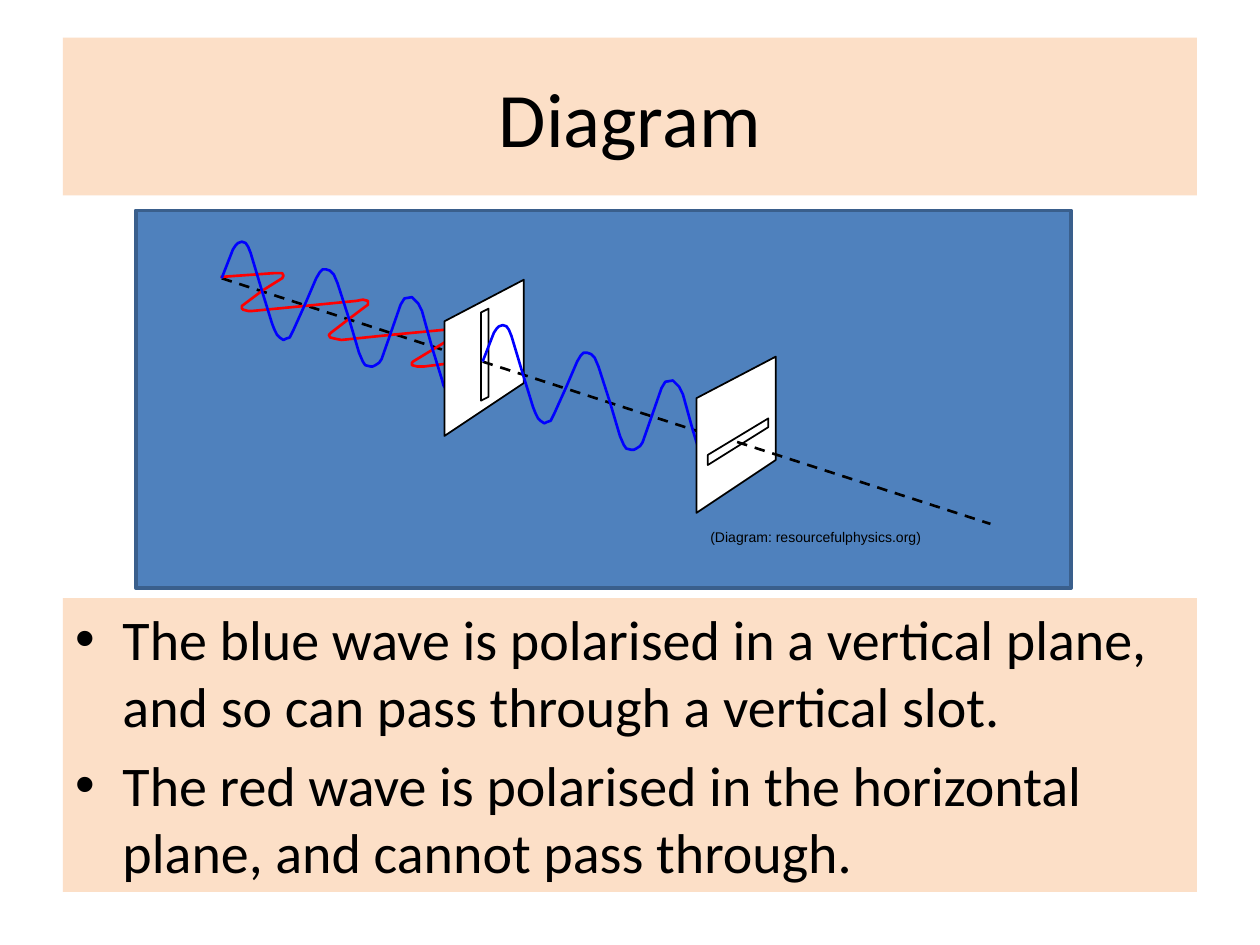
from collections import namedtuple
from dataclasses import dataclass

from lxml.etree import SubElement
from pptx import Presentation
from pptx.dml.color import RGBColor as RGB
from pptx.enum.dml import MSO_LINE as DASHES
from pptx.enum.shapes import MSO_SHAPE as SHAPES
from pptx.enum.text import MSO_ANCHOR as ANCHOR, PP_ALIGN as ALIGN
from pptx.oxml.ns import qn
from pptx.util import Cm, Pt

Box = namedtuple("Box", "left top width height")


@dataclass(frozen=True)
class Theme:
    peach: RGB = RGB(0xFC, 0xD5, 0xB5)
    panel: RGB = RGB(0x4F, 0x81, 0xBD)
    panel_edge: RGB = RGB(0x3A, 0x5F, 0x8C)
    ink: RGB = RGB(0, 0, 0)
    white: RGB = RGB(0xFF, 0xFF, 0xFF)
    red: RGB = RGB(0xFF, 0, 0)
    blue: RGB = RGB(0, 0, 0xFF)
    heading_size: int = 44
    body_size: int = 32
    caption_size: int = 8
    main_font: str = "Calibri"
    caption_font: str = "Arial"


THEME = Theme()
GRID = Cm(2.54) / 100

AXIS = [(0, 0), (201, 65)]
BLUE_WAVE = [
    (0, 0), (9, -23), (11, -26), (13, -28), (16, -29), (19, -28), (21, -25),
    (23, -20), (32, 10), (40, 36), (42, 41), (44, 45), (46, 47), (49, 49),
    (51, 48), (54, 47), (57, 41), (66, 21), (75, 0), (78, -5), (80, -7),
    (83, -7), (86, -6), (89, -3), (92, 4), (101, 32), (109, 59), (112, 66),
    (114, 69), (118, 70), (120, 70), (122, 69), (125, 67), (127, 64),
    (134, 44), (142, 21), (145, 16), (151, 15), (156, 20), (159, 26),
    (167, 55), (175, 81), (176, 85), (178, 88), (180, 91), (182, 92),
    (184, 93), (186, 93), (189, 92), (191, 89), (192, 86), (200, 66),
]
RED_WAVE = [
    (-1, -1), (41, -4), (44, -4), (48, -4), (49, -2), (48, 0), (32, 10),
    (16, 22), (16, 24), (17, 25), (21, 26), (24, 26), (66, 22), (107, 18),
    (112, 17), (116, 18), (116, 21), (100, 33), (87, 43), (85, 45), (86, 47),
    (90, 48), (95, 49), (134, 45), (176, 41), (180, 41), (186, 41), (186, 43),
    (185, 46), (152, 66), (151, 67), (151, 69), (155, 70), (161, 70), (201, 65),
]
PLATE = [(0, 33), (0, 124), (63, 82), (63, 0)]
VERTICAL_SLOT = [(29, 26), (29, 96), (35, 93), (35, 23)]
HORIZONTAL_SLOT = [(57, 56), (9, 86), (9, 78), (57, 49)]


def write_text(shape, lines, *, size, font, align=ALIGN.LEFT, anchor=ANCHOR.TOP,
               bullet=None, gap=0, after=0):
    frame = shape.text_frame
    frame.word_wrap = True
    frame.vertical_anchor = anchor
    for number, line in enumerate(lines):
        paragraph = frame.add_paragraph() if number else frame.paragraphs[0]
        if bullet:
            properties = paragraph._p.get_or_add_pPr()
            properties.set("marL", str(Cm(0.95)))
            properties.set("indent", str(-Cm(0.95)))
            SubElement(properties, qn("a:buFont")).set("typeface", "Arial")
            SubElement(properties, qn("a:buChar")).set("char", bullet)
        paragraph.alignment = align
        paragraph.space_before = Pt(gap if number else 0)
        paragraph.space_after = Pt(after)
        run = paragraph.add_run()
        run.text = line
        run.font.size = Pt(size)
        run.font.name = font
        run.font.color.rgb = THEME.ink


def add_panel(slide, box, color, opacity=100):
    panel = slide.shapes.add_shape(SHAPES.RECTANGLE, *box)
    panel.shadow.inherit = False
    panel.fill.solid()
    panel.fill.fore_color.rgb = color
    panel.line.fill.background()
    if opacity < 100:
        tint = panel.fill._xPr.find(qn("a:solidFill"))[0]
        SubElement(tint, qn("a:alpha")).set("val", str(opacity * 1000))
    return panel


def draw_path(slide, origin, points, *, color=THEME.ink, width=1.5, fill=None, dash=None):
    builder = slide.shapes.build_freeform(*points[0], scale=GRID)
    builder.add_line_segments(points[1:], close=fill is not None)
    path = builder.convert_to_shape(*origin)
    path.shadow.inherit = False
    if fill is None:
        path.fill.background()
    else:
        path.fill.solid()
        path.fill.fore_color.rgb = fill
    path.line.color.rgb = color
    path.line.width = Pt(width)
    if dash:
        path.line.dash_style = dash


def add_heading(slide, box):
    heading = add_panel(slide, box, THEME.peach, opacity=75)
    write_text(heading, ["Diagram"], size=THEME.heading_size, font=THEME.main_font,
               align=ALIGN.CENTER, anchor=ANCHOR.MIDDLE)


def add_diagram(slide, box):
    def at(x, y):
        return box.left + Cm(x), box.top + Cm(y)

    def add_axis(origin):
        draw_path(slide, origin, AXIS, dash=DASHES.DASH)

    def add_polariser(origin, slot):
        for outline in (PLATE, slot):
            draw_path(slide, origin, outline, width=1, fill=THEME.white)

    backdrop = add_panel(slide, box, THEME.panel)
    backdrop.line.color.rgb = THEME.panel_edge
    backdrop.line.width = Pt(2)

    source, first_exit, second_exit = at(1.73, 1.37), at(6.99, 3.05), at(12.12, 4.67)
    add_axis(source)
    draw_path(slide, source, RED_WAVE, color=THEME.red)
    draw_path(slide, source, BLUE_WAVE, color=THEME.blue)
    add_polariser(at(6.22, 1.4), VERTICAL_SLOT)
    add_axis(first_exit)
    draw_path(slide, first_exit, BLUE_WAVE, color=THEME.blue)
    add_polariser(at(11.3, 2.95), HORIZONTAL_SLOT)
    add_axis(second_exit)

    credit = slide.shapes.add_textbox(*at(11.33, 6.3), Cm(4.98), Cm(0.61))
    write_text(credit, ["(Diagram: resourcefulphysics.org)"], size=THEME.caption_size,
               font=THEME.caption_font, after=10)


def add_explanation(slide, box):
    explanation = add_panel(slide, box, THEME.peach, opacity=75)
    write_text(explanation, [
        "The blue wave is polarised in a vertical plane, and so can pass through a vertical slot.",
        "The red wave is polarised in the horizontal plane, and cannot pass through.",
    ], size=THEME.body_size, font=THEME.main_font, bullet="•", gap=THEME.body_size * 0.2)


def main():
    deck = Presentation()
    deck.slide_width, deck.slide_height = Cm(25.4), Cm(19.05)
    slide = deck.slides.add_slide(deck.slide_layouts[6])
    add_diagram(slide, Box(Cm(2.74), Cm(4.24), Cm(18.85), Cm(7.62)))
    add_heading(slide, Box(Cm(1.27), Cm(0.76), Cm(22.86), Cm(3.18)))
    add_explanation(slide, Box(Cm(1.27), Cm(12.06), Cm(22.86), Cm(5.92)))
    deck.save("out.pptx")


if __name__ == "__main__":
    main()
